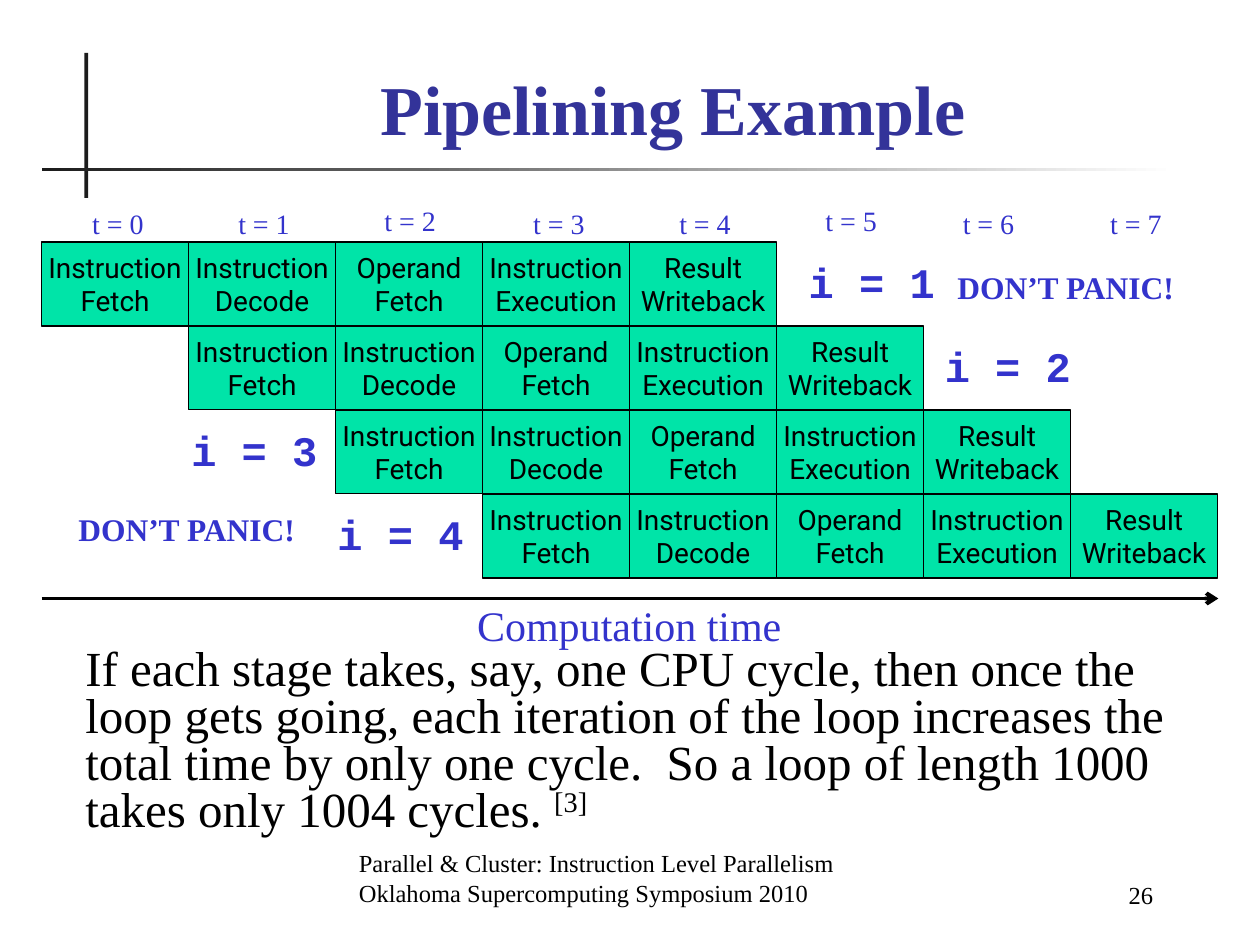
from lxml import etree
from pptx import Presentation
from pptx import util as u
from pptx.dml.color import RGBColor
from pptx.enum import shapes, text
from pptx.oxml import ns

COLOURS = {"ink": "000000", "rule": "1C1C1C", "paper": "FFFFFF",
           "title": "333399", "label": "3333CC", "stage": "00E4A8"}
SERIF, MONO, SANS = "Times New Roman", "Courier New", "Roboto"
LEFT, CENTER, RIGHT = text.PP_ALIGN.LEFT, text.PP_ALIGN.CENTER, text.PP_ALIGN.RIGHT
TOP, MIDDLE, BOTTOM = text.MSO_ANCHOR.TOP, text.MSO_ANCHOR.MIDDLE, text.MSO_ANCHOR.BOTTOM
STAGES = ["Instruction\nFetch", "Instruction\nDecode", "Operand\nFetch",
          "Instruction\nExecution", "Result\nWriteback"]
GRID_LEFT, GRID_TOP = 0.33, 1.92
STAGE_WIDTH, STAGE_HEIGHT = 3.5 / 3, 2 / 3
ITERATION_LEFTS = [6.32, 7.4, 1.42, 2.58]
TIME_PLACES = [(0.63, 1.59), (1.79, 1.59), (2.95, 1.57), (4.13, 1.59),
               (5.29, 1.59), (6.45, 1.57), (7.54, 1.59), (8.71, 1.59)]


def colour(name):
    """Return the named colour."""
    return RGBColor.from_string(COLOURS[name])


class SlideBuilder:
    """Hold the style and the current slide, and add elements to it."""

    def __init__(self, slide):
        """Keep the slide and the default text format."""
        self.slide = slide
        self.style = {"name": SERIF, "size": 16, "bold": False, "color": "ink"}

    def fill_text(self, shape, content, align=LEFT, anchor=TOP, wrap=True, **changes):
        """Fill a shape with formatted paragraphs."""
        frame = shape.text_frame
        frame.text = content
        frame.word_wrap = wrap
        frame.auto_size = text.MSO_AUTO_SIZE.NONE
        frame.vertical_anchor = anchor
        for paragraph in frame.paragraphs:
            paragraph.alignment = align
            for run in paragraph.runs:
                self.style_run(run, **changes)
        return frame

    def style_run(self, run, **changes):
        """Apply the default style with changes to a run."""
        values = {**self.style, **changes}
        values["size"] = u.Pt(values["size"])
        run.font.color.rgb = colour(values.pop("color"))
        for name, value in values.items():
            setattr(run.font, name, value)

    def title(self, content, *box):
        """Place and format the title."""
        shape = self.slide.shapes.title
        for name, value in zip(("left", "top", "width", "height"), box):
            setattr(shape, name, u.Inches(value))
        self.fill_text(shape, content, CENTER, BOTTOM, size=40, bold=True, color="title")

    def label(self, content, *box, **options):
        """Add a text box."""
        shape = self.slide.shapes.add_textbox(*map(u.Inches, box))
        return self.fill_text(shape, content, **options)

    def bar(self, *box, fill="rule", fade=None):
        """Add a rectangle without outline, fading to a colour if one is given."""
        shape = self.slide.shapes.add_shape(shapes.MSO_SHAPE.RECTANGLE, *map(u.Inches, box))
        shape.shadow.inherit = False
        shape.line.fill.background()
        if fade:
            shape.fill.gradient()
            shape.fill.gradient_angle = 0
            for stop, name in zip(shape.fill.gradient_stops, (fill, fade)):
                stop.color.rgb = colour(name)
        else:
            shape.fill.solid()
            shape.fill.fore_color.rgb = colour(fill)
        return shape

    def stage(self, content, *box):
        """Add an outlined pipeline stage."""
        shape = self.bar(*box, fill="stage")
        shape.line.color.rgb = colour("ink")
        shape.line.width = u.Pt(0.75)
        self.fill_text(shape, content, CENTER, MIDDLE, wrap=False, name=SANS)

    def arrow(self, *ends):
        """Add a straight arrow."""
        connector = self.slide.shapes.add_connector(
            shapes.MSO_CONNECTOR.STRAIGHT, *map(u.Inches, ends))
        connector.line.color.rgb = colour("ink")
        connector.line.width = u.Pt(2.25)
        line = connector.line._get_or_add_ln()
        etree.SubElement(line, ns.qn("a:tailEnd"), type="arrow")
        etree.SubElement(connector._element.spPr, ns.qn("a:effectLst"))


def main():
    """Build and save the presentation."""
    presentation = Presentation()
    presentation.slide_width, presentation.slide_height = u.Inches(10), u.Inches(7.5)
    slide = presentation.slides.add_slide(presentation.slide_layouts[5])
    builder = SlideBuilder(slide)

    builder.bar(0.67, 0.42, 0.03, 1.15)
    builder.bar(0.33, 1.33, 9, 0.03, fade="paper")
    builder.title("Pipelining Example", 1.08, 0.5, 8.52, 0.74)

    for row, label_left in enumerate(ITERATION_LEFTS):
        top = GRID_TOP + row * STAGE_HEIGHT
        for column, name in enumerate(STAGES, row):
            builder.stage(name, GRID_LEFT + column * STAGE_WIDTH, top,
                          STAGE_WIDTH, STAGE_HEIGHT)
        builder.label(f"i = {row + 1}", label_left, top + 0.07, 1.2, 0.5,
                      wrap=False, name=MONO, size=24, bold=True, color="label")

    for step, (left, top) in enumerate(TIME_PLACES):
        builder.label(f"t = {step}", left, top, 0.61, 0.37,
                      align=CENTER, wrap=False, color="label")
    for left, top, align in ((0.5, 4, RIGHT), (7.5, 2.08, LEFT)):
        builder.label("DON’T PANIC!", left, top, 1.94, 0.4, align=align,
                      wrap=False, size=18, bold=True, color="label")

    builder.arrow(0.33, 4.75, 9.67, 4.75)
    builder.label("Computation time", 3.69, 4.71, 2.61, 0.5,
                  align=CENTER, wrap=False, size=24, color="label")

    body = builder.label(
        "If each stage takes, say, one CPU cycle, then once the loop gets going, "
        "each iteration of the loop increases the total time by only one cycle.  "
        "So a loop of length 1000 takes only 1004 cycles. ",
        0.58, 5.1, 8.83, 1.59, size=28)
    paragraph = body.paragraphs[0]
    paragraph.line_spacing = 0.8
    citation = paragraph.add_run()
    citation.text = "[3]"
    builder.style_run(citation, size=28)
    citation._r.get_or_add_rPr().set("baseline", "30000")

    builder.label("Parallel & Cluster: Instruction Level Parallelism\n"
                  "Oklahoma Supercomputing Symposium 2010",
                  2.75, 6.75, 4.37, 0.5, anchor=BOTTOM, size=14)
    builder.label("26", 7.83, 6.77, 1.42, 0.5, align=RIGHT, anchor=BOTTOM, size=14)
    presentation.save("out.pptx")


if __name__ == "__main__":
    main()
